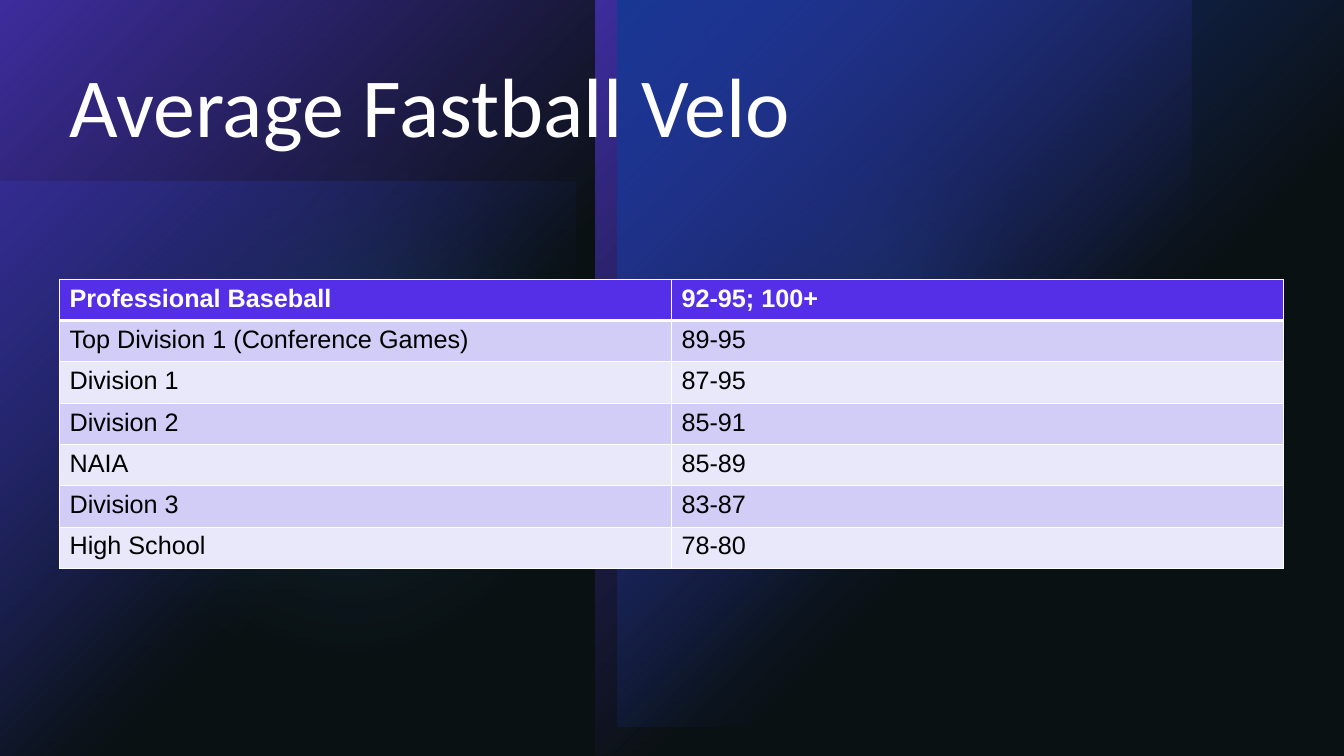
from dataclasses import dataclass

from lxml import etree
from pptx import Presentation
from pptx.dml.color import RGBColor
from pptx.enum import shapes, text
from pptx.oxml import parse_xml
from pptx.oxml.ns import nsdecls, qn
from pptx.util import Inches, Pt

BLACK = RGBColor(0x00, 0x00, 0x00)
WHITE = RGBColor(0xFF, 0xFF, 0xFF)
PURPLE = RGBColor(0x54, 0x2F, 0xE7)
BLUE = RGBColor(0x17, 0x40, 0xD5)
SKY = RGBColor(0x29, 0xA1, 0xE7)
SLATE = RGBColor(0x1B, 0x2B, 0x30)
LILAC = RGBColor(0xD1, 0xCD, 0xF6)
PALE_LILAC = RGBColor(0xE9, 0xE8, 0xFA)

WIDTH, HEIGHT = 13.33, 7.5
MARGIN = 0.59
CONTENT_WIDTH = 12.14
TABLE_TOP = 2.77
ROW_HEIGHT = 0.41
SOFT_EDGE = Pt(100)


@dataclass
class Panel:
    """A rectangle whose colour fades out from its top left corner."""
    left: float
    top: float
    width: float
    height: float
    color: RGBColor
    opacity: int = 100


@dataclass
class Glow:
    """A blurred disc of light."""
    left: float
    top: float
    size: float
    opacity: int


BACKDROP = [
    Panel(0, 1.8, 5.71, 5.71, BLUE, 60),
    Glow(6.29, 0.43, 4.72, 60),
    Glow(0, 0.56, 6.94, 20),
    Panel(0, 0, 5.91, 7.5, PURPLE),
    Panel(5.91, 0, 5.91, 7.5, PURPLE),
    Panel(6.13, 0, 7.21, 7.21, BLUE),
]

VELOCITIES = [
    ("Professional Baseball", "92-95; 100+"),
    ("Top Division 1 (Conference Games)", "89-95"),
    ("Division 1", "87-95"),
    ("Division 2", "85-91"),
    ("NAIA", "85-89"),
    ("Division 3", "83-87"),
    ("High School", "78-80"),
]


def add_plain(s, kind, left: float, top: float, width: float, height: float):
    sp = s.shapes.add_shape(kind, Inches(left), Inches(top), Inches(width), Inches(height))
    sp.shadow.inherit = False
    sp.line.fill.background()
    return sp


def fill_translucent(sp, color: RGBColor, opacity: int) -> None:
    sp.fill.solid()
    sp.fill.fore_color.rgb = color
    srgb = sp._element.spPr.find(qn("a:solidFill")).find(qn("a:srgbClr"))
    etree.SubElement(srgb, qn("a:alpha"), val=str(opacity * 1000))


def add_panel(s, panel: Panel) -> None:
    sp = add_plain(s, shapes.MSO_SHAPE.RECTANGLE, panel.left, panel.top, panel.width, panel.height)
    stops = "".join(
        f'<a:gs pos="{pos * 1000}"><a:srgbClr val="{panel.color}">'
        f'<a:alpha val="{opacity * 1000}"/></a:srgbClr></a:gs>'
        for pos, opacity in ((0, panel.opacity), (60, 0)))
    gradient = parse_xml(
        f'<a:gradFill {nsdecls("a")} rotWithShape="1"><a:gsLst>{stops}</a:gsLst>'
        '<a:path path="circle"><a:fillToRect r="100000" b="100000"/></a:path></a:gradFill>')
    sp._element.spPr.find(qn("a:prstGeom")).addnext(gradient)


def add_glow(s, glow: Glow) -> None:
    sp = add_plain(s, shapes.MSO_SHAPE.OVAL, glow.left, glow.top, glow.size, glow.size)
    fill_translucent(sp, SKY, glow.opacity)
    effects = sp._element.spPr.find(qn("a:effectLst"))
    etree.SubElement(effects, qn("a:softEdge"), rad=str(SOFT_EDGE))


def add_backdrop(s) -> None:
    s.background.fill.solid()
    s.background.fill.fore_color.rgb = BLACK
    for item in BACKDROP:
        if isinstance(item, Panel):
            add_panel(s, item)
        else:
            add_glow(s, item)
    veil = add_plain(s, shapes.MSO_SHAPE.RECTANGLE, 0, 0, WIDTH, HEIGHT)
    fill_translucent(veil, SLATE, 40)


def add_title(s, title: str) -> None:
    box = s.shapes.add_textbox(Inches(MARGIN), Inches(0.59), Inches(CONTENT_WIDTH), Inches(1.98))
    tf = box.text_frame
    tf.word_wrap = True
    tf.vertical_anchor = text.MSO_ANCHOR.TOP
    p = tf.paragraphs[0]
    p.text = title
    p.line_spacing = 0.9
    p.font.name, p.font.size = "Calibri", Pt(60)
    p.font.color.rgb = WHITE


def set_borders(cell, top: float, bottom: float) -> None:
    tc_pr = cell._tc.get_or_add_tcPr()
    for side, width in (("L", 1), ("R", 1), ("T", top), ("B", bottom)):
        tc_pr.append(parse_xml(
            f'<a:ln{side} {nsdecls("a")} w="{Pt(width)}"><a:solidFill>'
            f'<a:srgbClr val="{WHITE}"/></a:solidFill></a:ln{side}>'))


def add_velocity_table(s) -> None:
    rows, cols = len(VELOCITIES), len(VELOCITIES[0])
    frame = s.shapes.add_table(rows, cols, Inches(MARGIN), Inches(TABLE_TOP),
                               Inches(CONTENT_WIDTH), Inches(ROW_HEIGHT * rows))
    table = frame.table
    for i, values in enumerate(VELOCITIES):
        header = i == 0
        for j, value in enumerate(values):
            cell = table.cell(i, j)
            set_borders(cell, top=3 if i == 1 else 1, bottom=3 if header else 1)
            cell.fill.solid()
            cell.fill.fore_color.rgb = PURPLE if header else LILAC if i % 2 else PALE_LILAC
            p = cell.text_frame.paragraphs[0]
            p.text = value
            p.font.name, p.font.size, p.font.bold = "Arial", Pt(18), header
            p.font.color.rgb = WHITE if header else BLACK


def main() -> None:
    prs = Presentation()
    prs.slide_width, prs.slide_height = Inches(WIDTH), Inches(HEIGHT)
    s = prs.slides.add_slide(prs.slide_layouts[6])
    add_backdrop(s)
    add_title(s, "Average Fastball Velo")
    add_velocity_table(s)
    prs.save("out.pptx")


if __name__ == "__main__":
    main()
